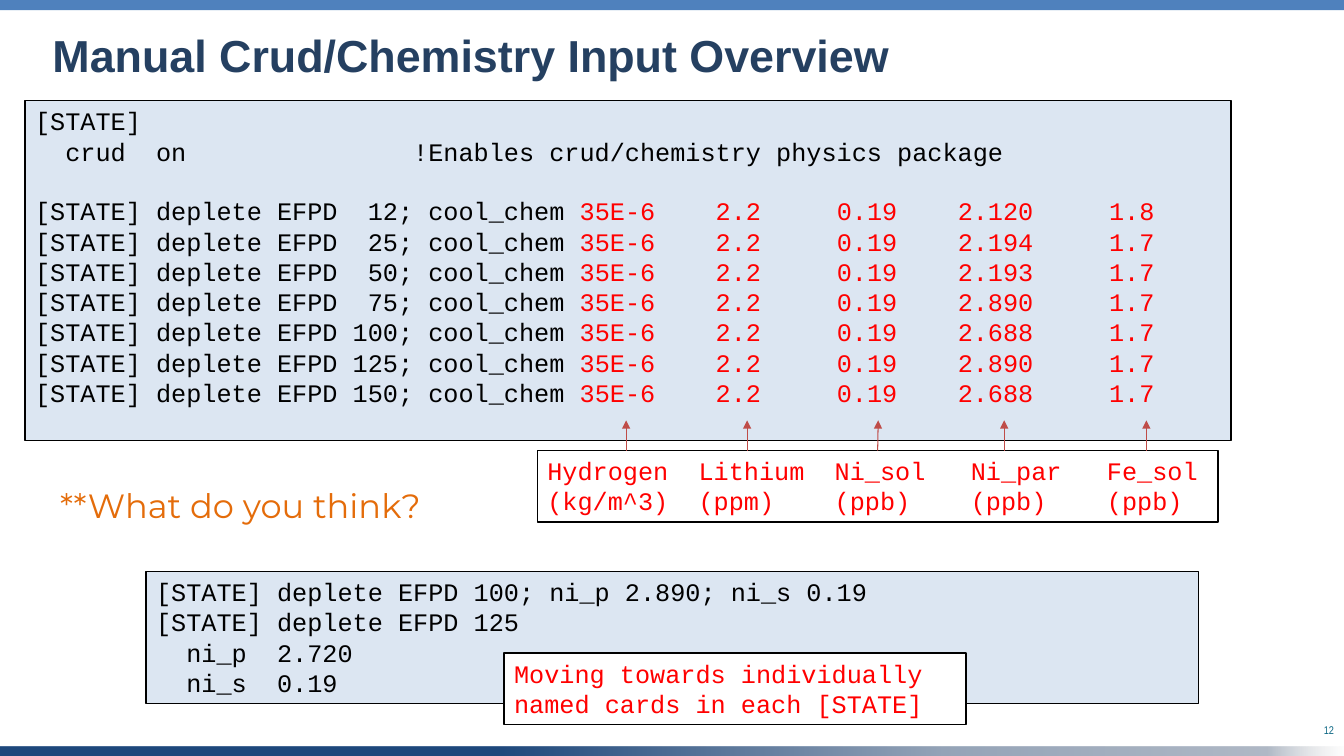
from lxml.etree import SubElement
from pptx import Presentation
from pptx.dml.color import RGBColor
from pptx.enum.shapes import MSO_CONNECTOR, MSO_SHAPE
from pptx.enum.text import MSO_ANCHOR, PP_ALIGN
from pptx.oxml.ns import qn
from pptx.util import Inches, Pt

COLORS = {
    "bar": "4F81BD", "title": "254061", "panel": "DCE6F2", "white": "FFFFFF",
    "black": "000000", "red": "FF0000", "arrow": "BF4C48",
    "question": "E46C0A", "number": "096582",
}
FOOTER_STOPS = [(37, "1F497D", 100), (70, "95A4B8", 100),
                (94, "B0B9C6", 100), (100, "DBDBDB", 0)]
CODE_FONT = "Courier New"
CODE_SIZE = 18
CODE_ROW = 21  # height of one line of code, in points
CHARACTER = 0.15  # width of one code character, in inches

# Effective full power days and particulate nickel, soluble iron
DEPLETION = [(12, "2.120", "1.8"), (25, "2.194", "1.7"), (50, "2.193", "1.7"),
             (75, "2.890", "1.7"), (100, "2.688", "1.7"),
             (125, "2.890", "1.7"), (150, "2.688", "1.7")]
LEGEND = [["Hydrogen", "Lithium", "Ni_sol", "Ni_par", "Fe_sol"],
          ["(kg/m^3)", "(ppm)", "(ppb)", "(ppb)", "(ppb)"]]
LEGEND_COLUMNS = [10, 19, 28, 37]
ARROW_LEFTS = [6.21, 7.41, 8.71, 9.96, 11.37]
MIDDLE_ARROW = 2


def color(name):
    return RGBColor.from_string(COLORS[name])


class SlideBuilder:
    def __init__(self, deck):
        self.page = deck.slides.add_slide(deck.slide_layouts[5])

    def add_span(self, para, text, tint, size=CODE_SIZE, font=CODE_FONT, bold=False):
        span = para.add_run()
        span.text = text
        span.font.name = font
        span.font.size = Pt(size)
        span.font.bold = bold
        span.font.color.rgb = color(tint)

    def title(self, text, left, top, width, height):
        box = self.page.shapes.title
        box.left, box.top = Inches(left), Inches(top)
        box.width, box.height = Inches(width), Inches(height)
        frame = box.text_frame
        frame.margin_left = frame.margin_right = Inches(0.1)
        frame.margin_top = frame.margin_bottom = Inches(0.06)
        frame.vertical_anchor = MSO_ANCHOR.TOP
        para = frame.paragraphs[0]
        para.alignment = PP_ALIGN.LEFT
        para.line_spacing = 0.85
        self.add_span(para, text, "title", 32, "Arial", True)

    def bar(self, top, tint):
        box = self.page.shapes.add_shape(
            MSO_SHAPE.RECTANGLE, 0, Inches(top), Inches(13.37), Inches(0.1))
        box.shadow.inherit = False
        box.line.fill.background()
        box.fill.solid()
        box.fill.fore_color.rgb = color(tint)
        return box

    def gradient_bar(self, top, stops):
        fill = self.bar(top, "bar").fill
        fill.gradient()
        fill.gradient_angle = 0
        stop_list = fill._xPr.find(qn("a:gradFill")).find(qn("a:gsLst"))
        for stop in list(stop_list):
            stop_list.remove(stop)
        for position, tint, opacity in stops:
            stop = SubElement(stop_list, qn("a:gs"), pos=str(position * 1000))
            shade = SubElement(stop, qn("a:srgbClr"), val=tint)
            if opacity < 100:
                SubElement(shade, qn("a:alpha"), val=str(opacity * 1000))

    def panel(self, left, top, width, height, fill, lines):
        """Each line is a list of (text, colour) spans."""
        box = self.page.shapes.add_shape(
            MSO_SHAPE.RECTANGLE, Inches(left), Inches(top), Inches(width), Inches(height))
        box.shadow.inherit = False
        box.fill.solid()
        box.fill.fore_color.rgb = color(fill)
        box.line.color.rgb = color("black")
        box.line.width = Pt(1)
        frame = box.text_frame
        frame.word_wrap = True
        frame.vertical_anchor = MSO_ANCHOR.TOP
        for index, spans in enumerate(lines):
            para = frame.paragraphs[0] if index == 0 else frame.add_paragraph()
            para.alignment = PP_ALIGN.LEFT
            for text, tint in spans:
                self.add_span(para, text, tint)
        return box

    def tab_stops(self, box, columns):
        for para in box.text_frame.paragraphs:
            tabs = SubElement(para._p.get_or_add_pPr(), qn("a:tabLst"))
            for column in columns:
                SubElement(tabs, qn("a:tab"), pos=str(Inches(column * CHARACTER)), algn="l")

    def label(self, text, left, top, width, height, align, tint, size, font):
        box = self.page.shapes.add_textbox(
            Inches(left), Inches(top), Inches(width), Inches(height))
        frame = box.text_frame
        frame.word_wrap = True
        frame.vertical_anchor = MSO_ANCHOR.MIDDLE
        frame.paragraphs[0].alignment = align
        self.add_span(frame.paragraphs[0], text, tint, size, font)

    def arrow(self, left, bottom, top):
        line = self.page.shapes.add_connector(
            MSO_CONNECTOR.STRAIGHT, Inches(left), Inches(bottom), Inches(left), Inches(top))
        line.line.color.rgb = color("arrow")
        line.line.width = Pt(0.75)
        SubElement(line.line._get_or_add_ln(), qn("a:tailEnd"), type="triangle")
        SubElement(line._element.spPr, qn("a:effectLst"))
        return line


def main():
    deck = Presentation()
    deck.slide_width, deck.slide_height = Inches(13.33), Inches(7.5)
    slide = SlideBuilder(deck)

    # Page frame and title
    slide.bar(0, "bar")
    slide.gradient_bar(7.41, FOOTER_STOPS)
    slide.label("12", 10.14, 7.12, 3.19, 0.24, PP_ALIGN.RIGHT, "number", 8, "Arial Narrow")
    slide.title("Manual Crud/Chemistry Input Overview", 0.42, 0.3, 12.16, 0.94)

    # Input listing, with a one-line gap before the depletion steps
    header = [[("[STATE]", "black")],
              [("  crud  on               !Enables crud/chemistry physics package", "black")]]
    steps = [[(f"[STATE] deplete EFPD {days:>3}; cool_chem ", "black"),
              (f"35E-6    2.2     0.19    {nickel}     {iron}", "red")]
             for days, nickel, iron in DEPLETION]
    listing = slide.panel(0.25, 1, 11.96, 3.37, "panel", header + steps)
    listing.text_frame.paragraphs[len(header)].space_before = Pt(CODE_ROW)

    # Legend and its arrows to the columns
    legend = slide.panel(5.33, 4.47, 6.75, 0.71, "white",
                         [[("\t".join(row), "red")] for row in LEGEND])
    slide.tab_stops(legend, LEGEND_COLUMNS)
    for index, left in enumerate(ARROW_LEFTS):
        arrow = slide.arrow(left, 4.47, 4.17)
        if index == MIDDLE_ARROW:
            arrow.begin_connect(legend, 0)

    # Alternative input and its callout
    cards = ["[STATE] deplete EFPD 100; ni_p 2.890; ni_s 0.19",
             "[STATE] deplete EFPD 125", "  ni_p  2.720", "  ni_s  0.19"]
    slide.panel(1.45, 5.67, 10.44, 1.31, "panel", [[(card, "black")] for card in cards])
    slide.panel(5, 6.48, 4.58, 0.71, "white",
                [[("Moving towards individually named cards in each [STATE]", "red")]])

    # Question to the audience
    slide.label("**What do you think?", 0.25, 4.76, 4.27, 0.5,
                PP_ALIGN.CENTER, "question", 24, "Montserrat")

    deck.save("out.pptx")


if __name__ == "__main__":
    main()
